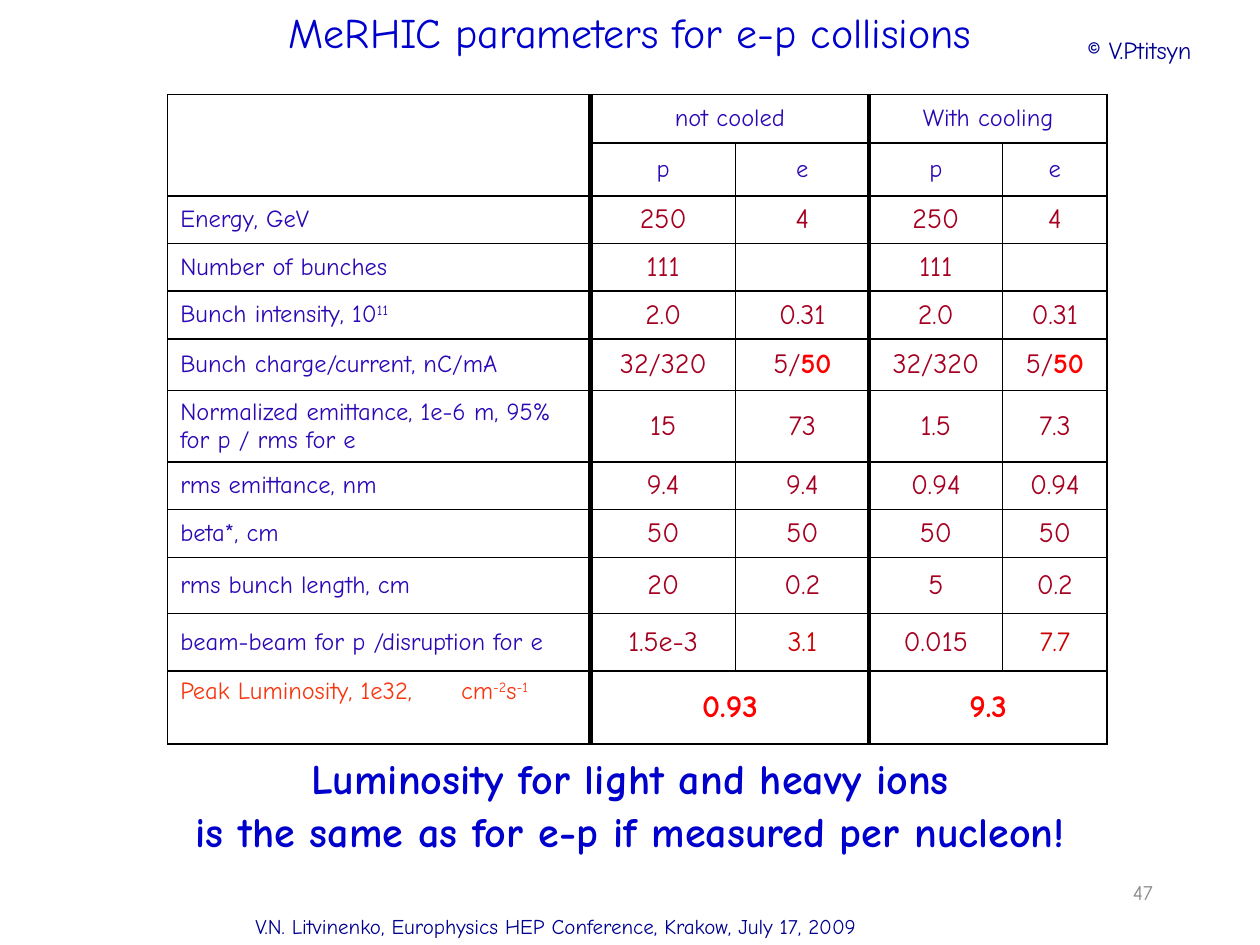
from dataclasses import dataclass

from lxml import etree
from pptx import Presentation, util as u
from pptx.dml.color import RGBColor
from pptx.enum import text as t
from pptx.oxml import ns


@dataclass(frozen=True)
class Theme:
    font: str = "Comic Neue"
    head: str = "0000CC"
    note: str = "000090"
    page: str = "8C8C8C"
    label: str = "2C07B5"
    value: str = "A50021"
    alert: str = "CC0000"
    hot: str = "FF0000"
    peak: str = "F7360F"
    line: str = "000000"
    big: int = 24
    total: int = 18
    mid: int = 16
    base: int = 14
    small: int = 12
    thin: int = 1
    thick: int = 3


TH = Theme()
LEFT, MID, RIGHT = t.PP_ALIGN.LEFT, t.PP_ALIGN.CENTER, t.PP_ALIGN.RIGHT
TOP, CENTER = t.MSO_ANCHOR.TOP, t.MSO_ANCHOR.MIDDLE

COLS = (8.53, 2.92, 2.69, 2.69, 2.11)
ROWS = (0.97, 1.07, 0.96, 0.96, 0.96, 1.04, 1.39, 0.96, 0.97, 1.13, 1.16, 1.47)
THICK = (1, 3)  # column edges with a heavy line

# A text is a string or a list of (words, style) parts
UP = {"up": True}
CHARGE = [("5/", {}), ("50", {"color": TH.hot, "bold": True})]
BODY = (
    ("Energy, GeV", "250", "4", "250", "4"),
    ("Number of bunches", "111", "", "111", ""),
    ([("Bunch intensity, 10", {}), ("11", UP)], "2.0", "0.31", "2.0", "0.31"),
    ("Bunch charge/current, nC/mA", "32/320", CHARGE, "32/320", CHARGE),
    ("Normalized emittance, 1e-6 m, 95% for p / rms for e",
     "15", "73", "1.5", "7.3"),
    ("rms emittance, nm", "9.4", "9.4", "0.94", "0.94"),
    ("beta*, cm", "50", "50", "50", "50"),
    ("rms bunch length, cm", "20", "0.2", "5", "0.2"),
    ("beam-beam for p /disruption for e", "1.5e-3",
     [("3.1", {"color": TH.alert})], "0.015", [("7.7", {"color": TH.alert})]),
)
PEAK = [("Peak Luminosity, 1e32,\tcm", {}), ("-2", UP), ("s", {}), ("-1", UP)]


def style(run, size, color, bold=False, up=False):
    font = run.font
    font.name, font.size, font.bold = TH.font, u.Pt(size), bold
    font.color.rgb = RGBColor.from_string(color)
    if up:
        run._r.get_or_add_rPr().set("baseline", "30000")


def write(par, words, size, color, align=LEFT, bold=False):
    par.alignment = align
    parts = [(words, {})] if isinstance(words, str) else words
    for part, extra in parts:
        run = par.add_run()
        run.text = part
        style(run, **{"size": size, "color": color, "bold": bold, **extra})


def box(slide, spot, lines, size, color, align=LEFT, bold=False,
        anchor=TOP, wrap=True):
    frame = slide.shapes.add_textbox(*map(u.Cm, spot)).text_frame
    frame.word_wrap, frame.vertical_anchor = wrap, anchor
    frame.text = "\n".join(lines)
    for num, par in enumerate(frame.paragraphs):
        par.alignment = align
        if num:
            par.space_before = u.Pt(1.7)
        for run in par.runs:
            style(run, size, color, bold)


def edge(cell, side, width):
    props = cell._tc.get_or_add_tcPr()
    line = etree.SubElement(props, ns.qn("a:ln" + side), w=str(u.Pt(width)))
    fill = etree.SubElement(line, ns.qn("a:solidFill"))
    etree.SubElement(fill, ns.qn("a:srgbClr"), val=TH.line)


def frame_cell(cell, col):
    span = cell.span_width if cell.is_merge_origin else 1
    for side, at in (("L", col), ("R", col + span)):
        edge(cell, side, TH.thick if at in THICK else TH.thin)
    for side in "TB":
        edge(cell, side, TH.thin)
    cell.fill.background()


def put(cell, words, size=TH.base, color=TH.label, align=MID, bold=False):
    cell.vertical_anchor = CENTER
    par = cell.text_frame.paragraphs[0]
    if words:
        write(par, words, size, color, align, bold)


def grid(slide):
    shape = slide.shapes.add_table(
        len(ROWS), len(COLS), u.Cm(3.38), u.Cm(1.91),
        u.Cm(sum(COLS)), u.Cm(sum(ROWS)))
    table = shape.table
    table.first_row = table.horz_banding = False
    for col, width in zip(table.columns, COLS):
        col.width = u.Cm(width)
    for row, height in zip(table.rows, ROWS):
        row.height = u.Cm(height)

    # Headings and totals, each over a pair of columns
    last = len(ROWS) - 1
    table.cell(0, 0).merge(table.cell(1, 0))
    for col, head, total in ((1, "not cooled", "0.93"),
                             (3, "With cooling", "9.3")):
        for row in (0, last):
            table.cell(row, col).merge(table.cell(row, col + 1))
        put(table.cell(0, col), head)
        put(table.cell(1, col), "p")
        put(table.cell(1, col + 1), "e")
        put(table.cell(last, col), total, TH.total, TH.hot, bold=True)

    # Parameters
    for row, (name, *vals) in enumerate(BODY, 2):
        put(table.cell(row, 0), name, align=LEFT)
        for col, val in enumerate(vals, 1):
            put(table.cell(row, col), val, TH.mid, TH.value)

    # Luminosity label, with a tab before its unit
    cell = table.cell(last, 0)
    props = cell.text_frame.paragraphs[0]._p.get_or_add_pPr()
    tabs = etree.SubElement(props, ns.qn("a:tabLst"))
    etree.SubElement(tabs, ns.qn("a:tab"), pos=str(u.Cm(5.66)), algn="l")
    put(cell, PEAK, color=TH.peak, align=LEFT)
    cell.vertical_anchor = TOP

    # Lines, and a small type size for empty cells
    for row in range(len(ROWS)):
        for col in range(len(COLS)):
            cell = table.cell(row, col)
            if not cell.text_frame.text:
                par = cell.text_frame.paragraphs[0]._p
                etree.SubElement(par, ns.qn("a:endParaRPr"),
                                 sz=str(TH.base * 100))
            if not cell.is_spanned:
                frame_cell(cell, col)


def main():
    deck = Presentation()
    deck.slide_width, deck.slide_height = u.Cm(25.4), u.Cm(19.05)
    slide = deck.slides.add_slide(deck.slide_layouts[6])

    # Title and table
    box(slide, (1.9, 0, 21.6, 2.34), ["MeRHIC parameters for e-p collisions"],
        TH.big, TH.head, MID)
    grid(slide)

    # Page number and credit
    box(slide, (18.21, 17.35, 5.28, 1.27), ["47"], TH.small, TH.page, RIGHT,
        anchor=CENTER)
    box(slide, (21.67, 0.58, 3.15, 0.86), ["© V.Ptitsyn"], TH.base, TH.note,
        wrap=False)

    # Conclusion and footer
    box(slide, (1.9, 15.04, 21.6, 2.34),
        ["Luminosity for light and heavy ions",
         "is the same as for e-p if measured per nucleon!"],
        TH.big, TH.head, MID, bold=True)
    box(slide, (4.9, 18.29, 15.09, 0.76),
        ["V.N. Litvinenko, Europhysics HEP Conference, Krakow, July 17, 2009"],
        TH.small, TH.note)
    deck.save("out.pptx")


if __name__ == "__main__":
    main()
